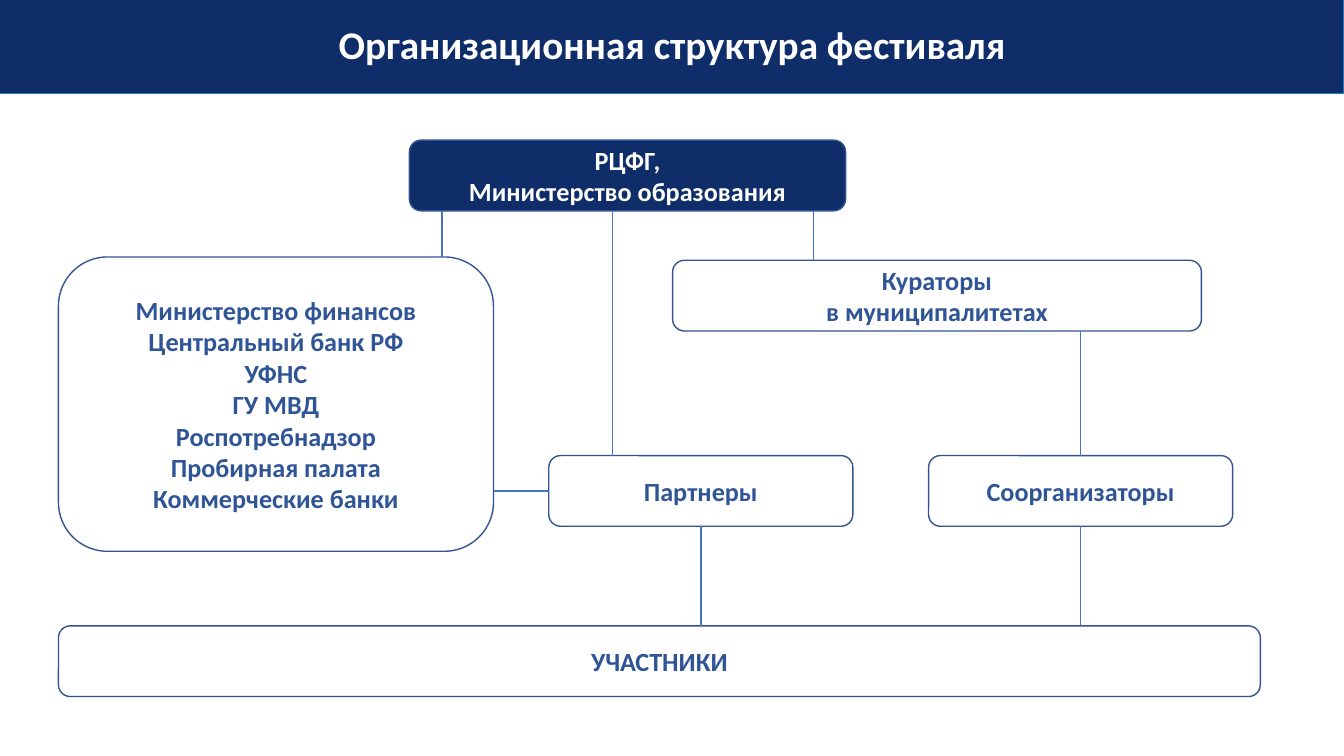
import pptx
import pptx.util
import pptx.dml.color
import pptx.enum.shapes
import pptx.enum.text
import pptx.oxml.ns
import lxml.etree

Inches = pptx.util.Inches
Pt = pptx.util.Pt
KIND = pptx.enum.shapes.MSO_SHAPE

COLORS = {"navy": "0E2D69", "rim": "1E7BBC", "edge": "325491",
          "text": "2F5597", "link": "4472C4", "white": "FFFFFF"}
FONT = "Calibri"
ROW = 12.7  # height of a one-row node, percent of the chart

# name: left, top, width, height in percent of the chart, then the lines
NODES = {
    "lead": (29.2, 0, 36.3, ROW, ["РЦФГ,", "Министерство образования"]),
    "state": (0, 21, 36.2, 52.9, [
        "Министерство финансов", "Центральный банк РФ", "УФНС", "ГУ МВД",
        "Роспотребнадзор", "Пробирная палата", "Коммерческие банки"]),
    "local": (51.1, 21.6, 44, ROW, ["Кураторы", "в муниципалитетах"]),
    "partner": (40.8, 56.7, 25.3, ROW, ["Партнеры"]),
    "helper": (72.4, 56.7, 25.3, ROW, ["Соорганизаторы"]),
    "member": (0, 87.3, 100, ROW, ["УЧАСТНИКИ"]),
}

# upper node, lower node, place across the chart in percent
DROPS = [("lead", "state", 31.9), ("lead", "local", 62.8),
         ("lead", "partner", 46.1), ("local", "helper", 85.05),
         ("helper", "member", 85.05), ("partner", "member", 53.45)]


def color(name):
    return pptx.dml.color.RGBColor.from_string(COLORS[name])


def add_box(slide, kind, box, lines, fill, edge, width, ink, size):
    shape = slide.shapes.add_shape(kind, *map(int, box))
    shape.shadow.inherit = False
    shape.fill.solid()
    shape.fill.fore_color.rgb = color(fill)
    shape.line.color.rgb = color(edge)
    shape.line.width = Pt(width)
    frame = shape.text_frame
    frame.word_wrap = True
    frame.vertical_anchor = pptx.enum.text.MSO_ANCHOR.MIDDLE
    frame.text = "\n".join(lines)
    for para in frame.paragraphs:
        para.alignment = pptx.enum.text.PP_ALIGN.CENTER
        for run in para.runs:
            run.font.name = FONT
            run.font.size = Pt(size)
            run.font.bold = True
            run.font.color.rgb = color(ink)
    return shape


def add_link(slide, x1, y1, x2, y2):
    link = slide.shapes.add_connector(
        pptx.enum.shapes.MSO_CONNECTOR.STRAIGHT, *map(int, (x1, y1, x2, y2)))
    link.line.color.rgb = color("link")
    link.line.width = Pt(1)
    lxml.etree.SubElement(link._element.spPr, pptx.oxml.ns.qn("a:effectLst"))
    return link


def add_drop(slide, upper, lower, x):
    """Link two nodes by a vertical line, joined where it meets a middle."""
    link = add_link(slide, x, upper.top + upper.height, x, lower.top)

    def centered(node):
        return abs(node.left + node.width / 2 - x) < Inches(0.02)

    if centered(upper):
        link.begin_connect(upper, 2)
    if centered(lower):
        link.end_connect(lower, 0)


def add_header(slide, box):
    band = add_box(slide, KIND.RECTANGLE, box,
                   ["Организационная структура фестиваля"],
                   "navy", "rim", 0.75, "white", 28)
    band.text_frame.paragraphs[0].line_spacing = 0.9


def add_chart(slide, box):
    left, top, width, height = box
    nodes = {}
    for name, (x, y, w, h, lines) in NODES.items():
        place = (left + width * x / 100, top + height * y / 100,
                 width * w / 100, height * h / 100)
        fill, ink = ("navy", "white") if name == "lead" else ("white", "text")
        nodes[name] = add_box(slide, KIND.ROUNDED_RECTANGLE, place, lines,
                              fill, "edge", 1, ink, 18.7)
    for upper, lower, x in DROPS:
        add_drop(slide, nodes[upper], nodes[lower], left + width * x / 100)
    state, partner = nodes["state"], nodes["partner"]
    mid = partner.top + partner.height / 2
    side = add_link(slide, state.left + state.width, mid, partner.left, mid)
    side.end_connect(partner, 1)


def main():
    deck = pptx.Presentation()
    deck.slide_width = Inches(13.33)
    deck.slide_height = Inches(7.5)
    slide = deck.slides.add_slide(deck.slide_layouts[6])
    add_header(slide, (0, 0, deck.slide_width, Inches(0.93)))
    add_chart(slide, [Inches(n) for n in (0.58, 1.39, 11.92, 5.52)])
    deck.save("out.pptx")


if __name__ == "__main__":
    main()
